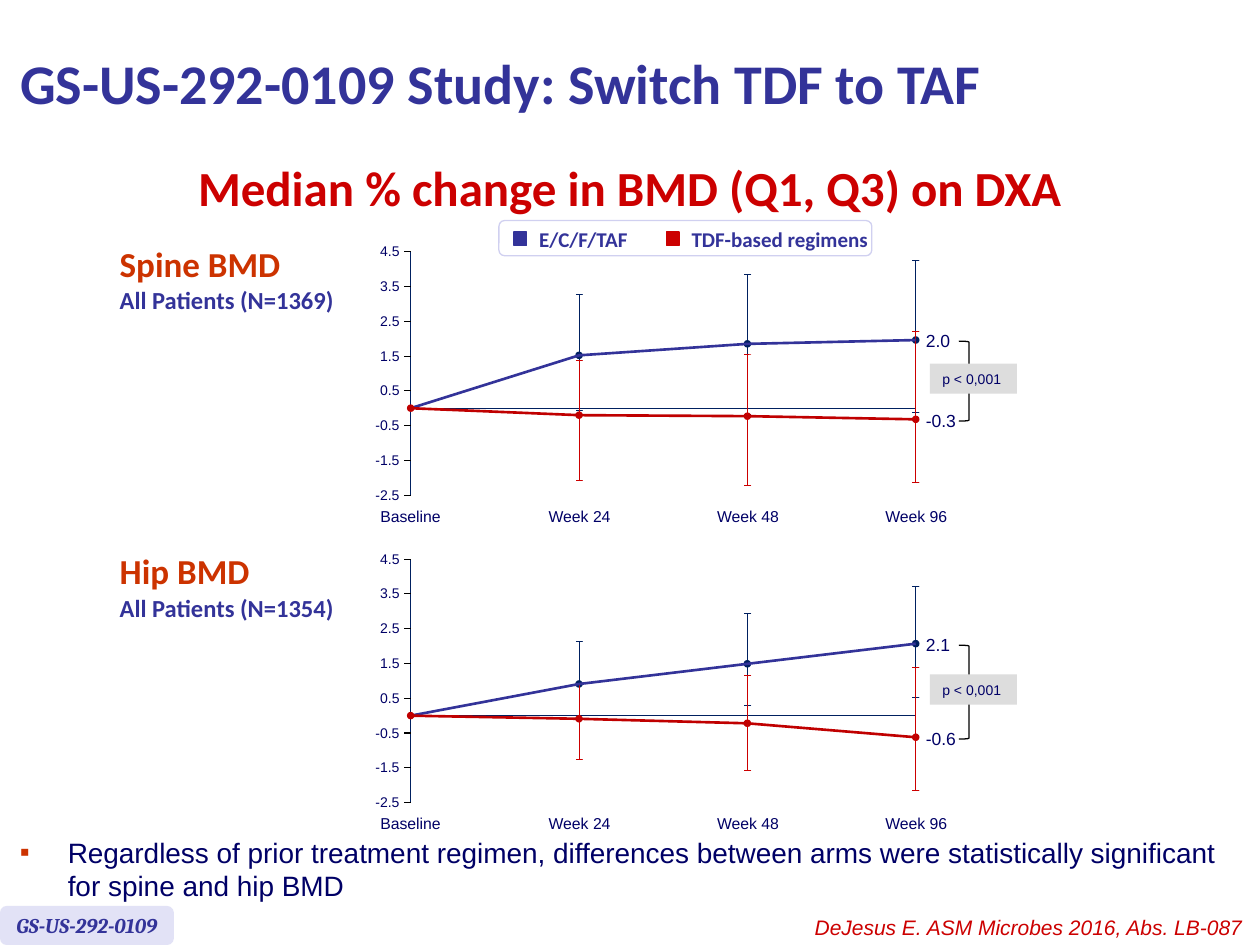
from dataclasses import dataclass

import pptx
import pptx.dml.color
import pptx.enum.shapes
import pptx.enum.text
import pptx.oxml.ns
import pptx.util
from lxml import etree

COLORS = {
    "blue": "333399", "navy": "002060", "ink": "000066", "red": "CC0000",
    "dark red": "C00000", "orange": "CC3300", "black": "000000",
    "white": "FFFFFF", "grey": "DDDDDD", "lilac": "E2E2F6", "border": "D0D0F0",
}
SHAPE = pptx.enum.shapes.MSO_SHAPE
ALIGN = pptx.enum.text.PP_ALIGN
MIDDLE = pptx.enum.text.MSO_ANCHOR.MIDDLE
AUTO = pptx.enum.text.MSO_AUTO_SIZE

# The slide is a grid of 100 columns by 75 rows of equal square cells
CELL = pptx.util.Inches(0.1)
AXIS_X, WEEK_STEP, ROWS_PER_UNIT = 32.6, 13.36, 2.76
WEEKS = ["Baseline", "Week 24", "Week 48", "Week 96"]
TICKS = [4.5 - i for i in range(8)]


@dataclass
class Series:
    line: str
    marker: str
    whisker: str
    medians: list[float]
    quartiles: list[tuple[float, float]]  # upper, lower at weeks 24, 48, 96
    label: float


@dataclass
class Panel:
    heading: str
    patients: str
    zero: float  # row of the zero line
    taf: Series
    tdf: Series

    def row(self, value: float) -> float:
        return self.zero - value * ROWS_PER_UNIT


def taf(medians, quartiles, label) -> Series:
    return Series("blue", "navy", "navy", medians, quartiles, label)


def tdf(medians, quartiles, label) -> Series:
    return Series("dark red", "dark red", "red", medians, quartiles, label)


PANELS = [
    Panel("Spine BMD", "All Patients (N=1369)", 32.4,
          taf([0, 1.52, 1.85, 1.96], [(3.26, -0.07), (3.84, -0.18), (4.24, -0.11)], 2.0),
          tdf([0, -0.2, -0.23, -0.32], [(1.38, -2.07), (1.56, -2.21), (2.21, -2.14)], -0.3)),
    Panel("Hip BMD", "All Patients (N=1354)", 56.8,
          taf([0, 0.91, 1.49, 2.07], [(2.14, 0), (2.93, 0.29), (3.73, 0.51)], 2.1),
          tdf([0, -0.09, -0.22, -0.62], [(0.94, -1.27), (1.16, -1.59), (1.38, -2.14)], -0.6)),
]


def cells(*values: float) -> list[int]:
    return [round(v * CELL) for v in values]


def rgb(name: str) -> pptx.dml.color.RGBColor:
    return pptx.dml.color.RGBColor.from_string(COLORS[name])


def week_x(i: int) -> float:
    return AXIS_X + i * WEEK_STEP


def write(sp, text: str, size: float, color: str, font="Arial", align=ALIGN.LEFT,
          inset=True, spacing=None, frame=None, **style):
    tf = sp.text_frame
    options = {"word_wrap": False, "auto_size": AUTO.SHAPE_TO_FIT_TEXT} | (frame or {})
    if not inset:
        options |= dict.fromkeys(
            ["margin_left", "margin_right", "margin_top", "margin_bottom"], 0)
    for name, value in options.items():
        setattr(tf, name, value)
    p = tf.paragraphs[0]
    p.alignment = align
    if spacing:
        p.line_spacing = spacing
    r = p.add_run()
    r.text = text
    r.font.color.rgb = rgb(color)
    for name, value in ({"name": font, "size": pptx.util.Pt(size)} | style).items():
        setattr(r.font, name, value)
    return p


def label(shapes, at: tuple, text: str, size: float, color: str, **options):
    return write(shapes.add_textbox(*cells(*at)), text, size, color, **options)


def outline(sp, color: str | None, width=0.75) -> None:
    if color:
        sp.line.color.rgb = rgb(color)
        sp.line.width = pptx.util.Pt(width)
    else:
        sp.line.fill.background()


def shape(shapes, kind, at: tuple, fill: str | None, line: str | None = None):
    sp = shapes.add_shape(kind, *cells(*at))
    sp.shadow.inherit = False
    if fill:
        sp.fill.solid()
        sp.fill.fore_color.rgb = rgb(fill)
    else:
        sp.fill.background()
    outline(sp, line)
    return sp


def rule(shapes, start: tuple, end: tuple, color: str) -> None:
    sp = shapes.add_connector(pptx.enum.shapes.MSO_CONNECTOR.STRAIGHT, *cells(*start, *end))
    outline(sp, color, 0.63)
    etree.SubElement(sp._element.spPr, pptx.oxml.ns.qn("a:effectLst"))


def polyline(shapes, points: list[tuple], color: str, width: float) -> None:
    first, *rest = [tuple(cells(*pt)) for pt in points]
    builder = shapes.build_freeform(*first)
    builder.add_line_segments(rest, close=False)
    sp = builder.convert_to_shape()
    sp.shadow.inherit = False
    sp.fill.background()
    outline(sp, color, width)


def marker(shapes, x: float, y: float, color: str) -> None:
    shape(shapes, SHAPE.OVAL, (x - 0.3, y - 0.3, 0.6, 0.6), color)


def whisker(shapes, x: float, top: float, bottom: float, color: str) -> None:
    left, right = x - 0.26, x + 0.26
    polyline(shapes, [(left, top), (right, top), (x, top),
                      (x, bottom), (right, bottom), (left, bottom)], color, 0.5)


def draw_panel(slide_shapes, panel: Panel) -> None:
    heading = {"font": "Calibri", "bold": True, "inset": False, "spacing": 0.9}
    label(slide_shapes, (9.5, panel.zero - 12.8, 12.9, 3), panel.heading, 20, "orange", **heading)
    label(slide_shapes, (9.5, panel.zero - 9.5, 17.2, 2.1), panel.patients, 14, "blue", **heading)

    # Axes and their labels
    shapes = slide_shapes.add_group_shape().shapes
    rule(shapes, (AXIS_X, panel.row(-2.5)), (AXIS_X, panel.row(4.5)), "navy")
    for tick in TICKS:
        y = panel.row(tick)
        rule(shapes, (AXIS_X - 0.5, y), (AXIS_X, y), "black")
        label(shapes, (28.2, y - 1.2, 4.5, 2.4), f"{tick}", 8, "ink", align=ALIGN.RIGHT)
    for i, week in enumerate(WEEKS):
        label(shapes, (week_x(i) - 3.4, panel.zero + 7.3, 7.2, 2.5), week, 9, "ink")
    rule(shapes, (AXIS_X, panel.zero), (week_x(3), panel.zero), "navy")

    # Medians with quartile whiskers
    both = [panel.taf, panel.tdf]
    for series in both:
        for i, (upper, lower) in enumerate(series.quartiles, 1):
            marker(shapes, week_x(i), panel.row(series.medians[i]), series.marker)
            whisker(shapes, week_x(i), panel.row(upper), panel.row(lower), series.whisker)
    for series in both:
        points = [(week_x(i), panel.row(v)) for i, v in enumerate(series.medians)]
        polyline(shapes, points, series.line, 1.5)
    marker(shapes, AXIS_X, panel.zero, "dark red")

    # Final values, bracket and p value
    top, bottom = [panel.row(series.label) + 0.2 for series in both]
    for series, y in zip(both, (top, bottom)):
        label(shapes, (72.5, y - 1.4, 5.5, 2.7), f"{series.label}", 10, "ink")
    shape(shapes, SHAPE.RIGHT_BRACKET, (76.1, top, 0.8, bottom - top), None, "black")
    box = shape(shapes, SHAPE.RECTANGLE, (73.8, (top + bottom) / 2 - 1.4, 6.9, 2.4), "grey")
    write(box, "p < 0,001", 8, "ink")


def draw_legend(slide_shapes) -> None:
    shapes = slide_shapes.add_group_shape().shapes
    shape(shapes, SHAPE.ROUNDED_RECTANGLE, (39.6, 17.5, 29.6, 2.8), "white", "border")
    for x, width, text, color in [(40.8, 11.1, "E/C/F/TAF", "blue"),
                                  (52.9, 17.4, "TDF-based regimens", "red")]:
        shape(shapes, SHAPE.RECTANGLE, (x, 18.4, 1, 1.1), color, color)
        label(shapes, (x + 1, 17.5, width, 3), text, 12, "blue", font="Calibri",
              bold=True, frame={"word_wrap": True})


def main() -> None:
    prs = pptx.Presentation()
    prs.slide_width, prs.slide_height = cells(100, 75)
    s = prs.slides.add_slide(prs.slide_layouts[5])

    # Title and subtitle
    title = s.shapes.title
    title.left, title.top, title.width, title.height = cells(0.6, 0.5, 89.6, 12.1)
    fixed = {"word_wrap": True, "auto_size": AUTO.NONE}
    write(title, "GS-US-292-0109 Study: Switch TDF to TAF", 32, "blue", font="Calibri",
          bold=True, frame=fixed | {"vertical_anchor": MIDDLE})
    label(s.shapes, (14, 12, 71.9, 5.7), "Median % change in BMD (Q1, Q3) on DXA", 28, "red",
          font="Calibri", align=ALIGN.CENTER, bold=True)

    for panel in PANELS:
        draw_panel(s.shapes, panel)
    draw_legend(s.shapes)

    # Conclusion
    p = label(s.shapes, (0.6, 65.8, 98.7, 7.1),
              "Regardless of prior treatment regimen, differences between arms were "
              "statistically significant for spine and hip BMD", 16, "ink", frame=fixed)
    pPr = p._p.get_or_add_pPr()
    indent = cells(3.8)[0]
    pPr.set("marL", str(indent))
    pPr.set("indent", str(-indent))
    qn = pptx.oxml.ns.qn
    bullet_color = etree.SubElement(pPr, qn("a:buClr"))
    etree.SubElement(bullet_color, qn("a:srgbClr"), val=COLORS["orange"])
    etree.SubElement(pPr, qn("a:buFont"), typeface="Arial")
    etree.SubElement(pPr, qn("a:buChar"), char="▪")

    # Footer
    tag = shape(s.shapes, SHAPE.ROUNDED_RECTANGLE, (0, 71.9, 13.8, 3.1), "lilac")
    write(tag, "GS-US-292-0109", 12, "blue", font="Cambria", align=ALIGN.CENTER, bold=True,
          italic=True, frame={"auto_size": AUTO.NONE, "vertical_anchor": MIDDLE})
    label(s.shapes, (53.7, 72.1, 45.9, 3), "DeJesus E. ASM Microbes 2016, Abs. LB-087", 12,
          "red", align=ALIGN.RIGHT, italic=True, frame={"word_wrap": True})

    prs.save("out.pptx")


if __name__ == "__main__":
    main()
